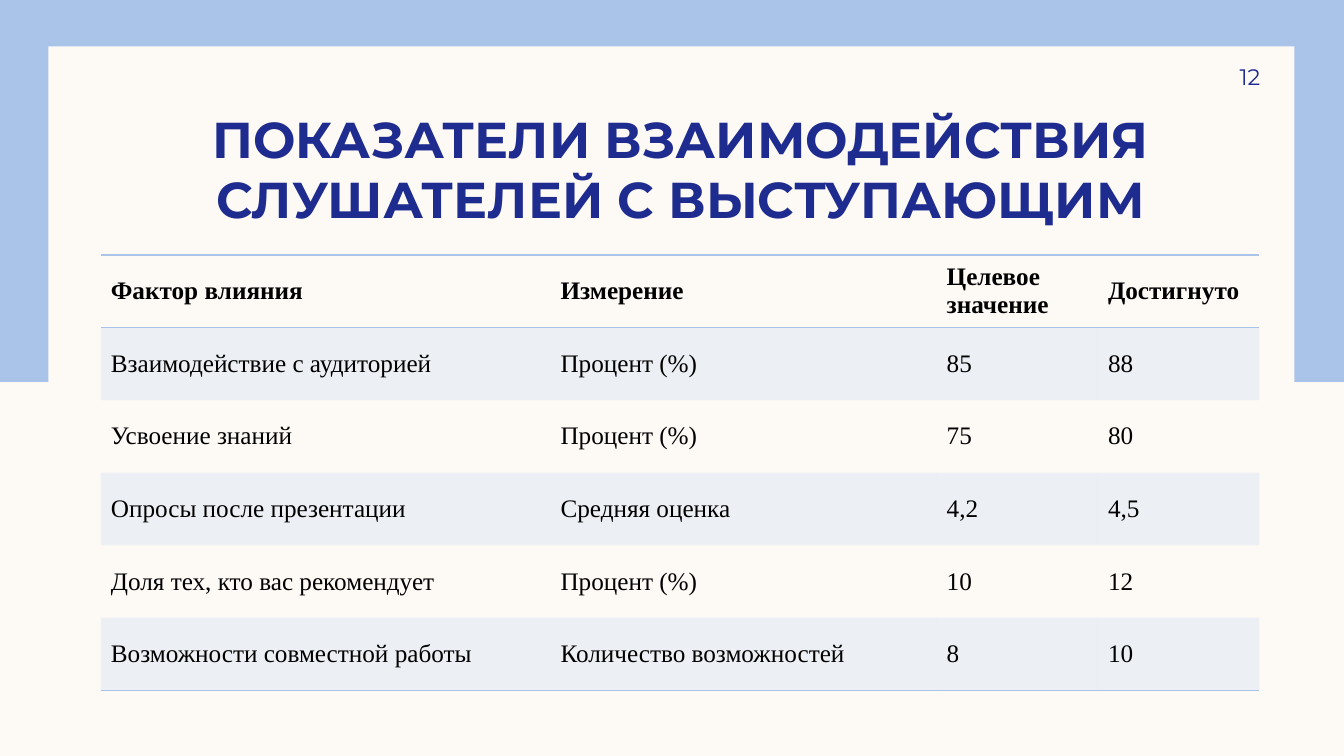
from dataclasses import dataclass

import lxml.etree
import pptx
import pptx.dml.color
import pptx.enum.shapes
import pptx.enum.text
import pptx.oxml
import pptx.oxml.ns
import pptx.util

Color = pptx.dml.color.RGBColor
Align = pptx.enum.text.PP_ALIGN
Anchor = pptx.enum.text.MSO_ANCHOR
qn = pptx.oxml.ns.qn

SLIDE_WIDTH = pptx.util.Inches(13.33)
SLIDE_HEIGHT = pptx.util.Inches(7.5)
PLAIN_TABLE_STYLE = "{2D5ABB26-0587-4C30-8999-92F81FD0307C}"


@dataclass(frozen=True)
class Theme:
    paper: str = "FDFAF6"
    sky: str = "AAC3E8"
    navy: str = "1F2C8F"
    black: str = "000000"
    heading_font: str = "Montserrat"
    table_font: str = "Times New Roman"
    title_size: int = 36
    table_size: int = 18
    number_size: int = 16
    rule_width: int = 1
    band_opacity: int = 20


@dataclass(frozen=True)
class Box:
    """A place on the slide, in percent of its width and height."""
    left: float
    top: float
    width: float
    height: float

    def lengths(self) -> tuple[int, int, int, int]:
        return (round(SLIDE_WIDTH * self.left / 100), round(SLIDE_HEIGHT * self.top / 100),
                round(SLIDE_WIDTH * self.width / 100), round(SLIDE_HEIGHT * self.height / 100))


@dataclass(frozen=True)
class Panel:
    box: Box
    color: str


@dataclass(frozen=True)
class Indicator:
    factor: str
    measure: str
    target: str
    achieved: str

    def values(self) -> tuple[str, str, str, str]:
        return self.factor, self.measure, self.target, self.achieved


THEME = Theme()
PANELS = (
    Panel(Box(0, 0, 100, 50.53), THEME.sky),
    Panel(Box(3.6, 6.13, 92.72, 87.87), THEME.paper),
)
TITLE_BOX = Box(7.5, 15.47, 86.27, 14.8)
TABLE_BOX = Box(7.5, 33.73, 86.2, 57.6)
NUMBER_BOX = Box(85, 6.67, 8.78, 6.93)
COLUMN_WEIGHTS = (4.46, 3.83, 1.6, 1.6)

TITLE = "ПОКАЗАТЕЛИ ВЗАИМОДЕЙСТВИЯ СЛУШАТЕЛЕЙ С ВЫСТУПАЮЩИМ"
INDICATORS = (
    Indicator("Фактор влияния", "Измерение", "Целевое значение", "Достигнуто"),
    Indicator("Взаимодействие с аудиторией", "Процент (%)", "85", "88"),
    Indicator("Усвоение знаний", "Процент (%)", "75", "80"),
    Indicator("Опросы после презентации", "Средняя оценка", "4,2", "4,5"),
    Indicator("Доля тех, кто вас рекомендует", "Процент (%)", "10", "12"),
    Indicator("Возможности совместной работы", "Количество возможностей", "8", "10"),
)


def style_font(font, name: str, size: int, color: str, bold: bool = False) -> None:
    font.name = name
    font.size = pptx.util.Pt(size)
    font.bold = bold
    font.color.rgb = Color.from_string(color)


def add_panel(slide, panel: Panel) -> None:
    shape = slide.shapes.add_shape(
        pptx.enum.shapes.MSO_SHAPE.RECTANGLE, *panel.box.lengths())
    shape.shadow.inherit = False
    shape.fill.solid()
    shape.fill.fore_color.rgb = Color.from_string(panel.color)
    shape.line.fill.background()


def fill_text(shape, text: str, size: int, alignment, anchor, bold: bool = False) -> None:
    frame = shape.text_frame
    frame.word_wrap = True
    frame.auto_size = pptx.enum.text.MSO_AUTO_SIZE.NONE
    frame.vertical_anchor = anchor
    frame.text = text
    paragraph = frame.paragraphs[0]
    paragraph.alignment = alignment
    style_font(paragraph.font, THEME.heading_font, size, THEME.navy, bold)


def add_title(slide) -> None:
    title = slide.shapes.title
    title.left, title.top, title.width, title.height = TITLE_BOX.lengths()
    fill_text(title, TITLE, THEME.title_size, Align.CENTER, Anchor.BOTTOM, bold=True)
    title.text_frame.margin_top = title.text_frame.margin_bottom = 0


def add_number(slide, number: str) -> None:
    text_box = slide.shapes.add_textbox(*NUMBER_BOX.lengths())
    fill_text(text_box, number, THEME.number_size, Align.RIGHT, Anchor.MIDDLE)
    text_box.text_frame.margin_right = 0


def shade_cell(cell) -> None:
    cell.fill.solid()
    cell.fill.fore_color.rgb = Color.from_string(THEME.sky)
    color = cell._tc.tcPr.find(".//" + qn("a:srgbClr"))
    lxml.etree.SubElement(color, qn("a:alpha"), val=str(THEME.band_opacity * 1000))


def rule_cell(cell, edges: tuple[str, ...]) -> None:
    # Border lines come before the fill in the cell properties
    for position, edge in enumerate(edges):
        line = lxml.etree.Element(qn(edge), w=str(pptx.util.Pt(THEME.rule_width)))
        fill = lxml.etree.SubElement(line, qn("a:solidFill"))
        lxml.etree.SubElement(fill, qn("a:srgbClr"), val=THEME.sky)
        cell._tc.get_or_add_tcPr().insert(position, line)


def add_indicator_table(slide) -> None:
    row_count = len(INDICATORS)
    frame = slide.shapes.add_table(row_count, len(COLUMN_WEIGHTS), *TABLE_BOX.lengths())
    table = frame.table
    table.horz_banding = False
    table._tbl.tblPr.find(qn("a:tableStyleId")).text = PLAIN_TABLE_STYLE
    table_width = TABLE_BOX.lengths()[2]
    for column, weight in zip(table.columns, COLUMN_WEIGHTS):
        column.width = round(table_width * weight / sum(COLUMN_WEIGHTS))

    edges_by_row = {0: ("a:lnT", "a:lnB"), row_count - 1: ("a:lnB",)}
    for row_index, indicator in enumerate(INDICATORS):
        for column_index, value in enumerate(indicator.values()):
            cell = table.cell(row_index, column_index)
            cell.text = value
            cell.vertical_anchor = Anchor.MIDDLE
            style_font(cell.text_frame.paragraphs[0].font, THEME.table_font,
                       THEME.table_size, THEME.black, bold=row_index == 0)
            if row_index % 2:
                shade_cell(cell)
            else:
                cell.fill.background()
            rule_cell(cell, edges_by_row.get(row_index, ()))


def main() -> None:
    presentation = pptx.Presentation()
    presentation.slide_width = SLIDE_WIDTH
    presentation.slide_height = SLIDE_HEIGHT
    slide = presentation.slides.add_slide(presentation.slide_layouts.get_by_name("Title Only"))

    # Background and frame, kept behind the title
    slide.background.fill.solid()
    slide.background.fill.fore_color.rgb = Color.from_string(THEME.paper)
    for panel in PANELS:
        add_panel(slide, panel)
    slide.shapes._spTree.append(slide.shapes.title._element)

    # Content
    add_title(slide)
    add_indicator_table(slide)
    add_number(slide, "12")

    presentation.save("out.pptx")


if __name__ == "__main__":
    main()
